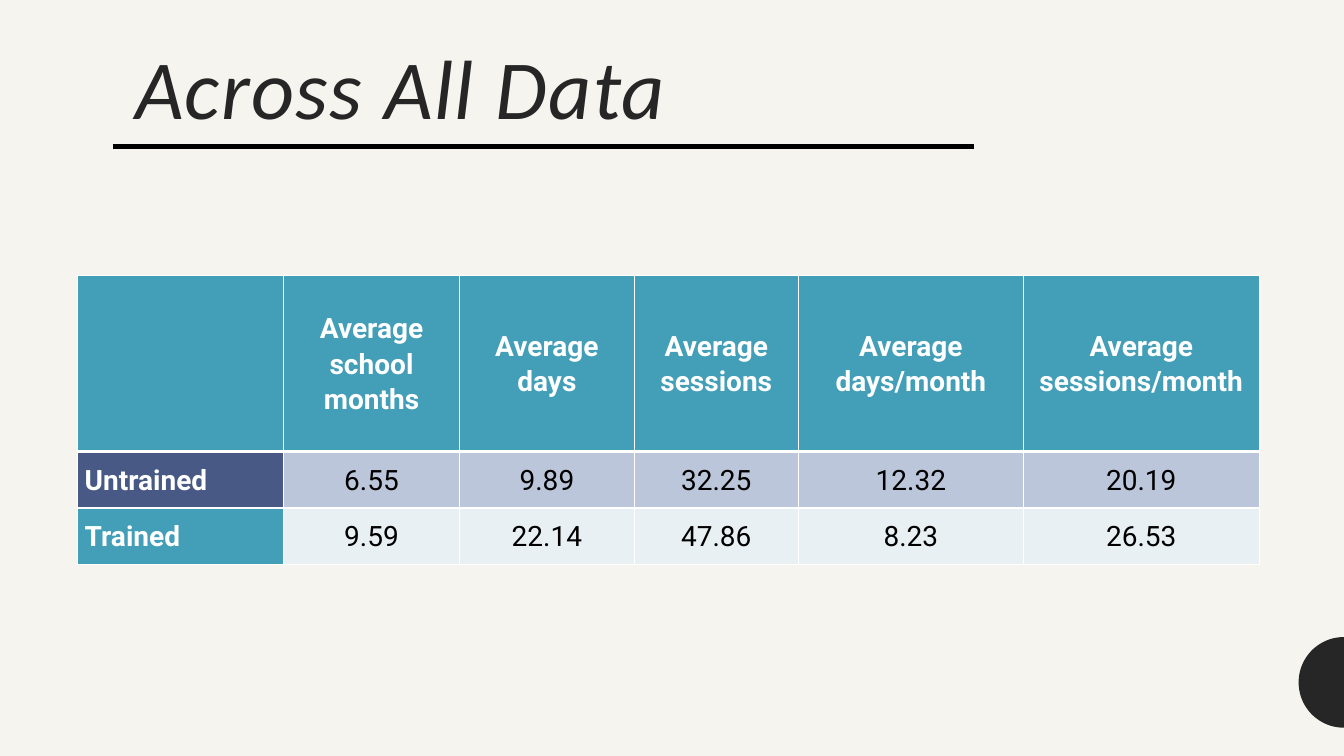
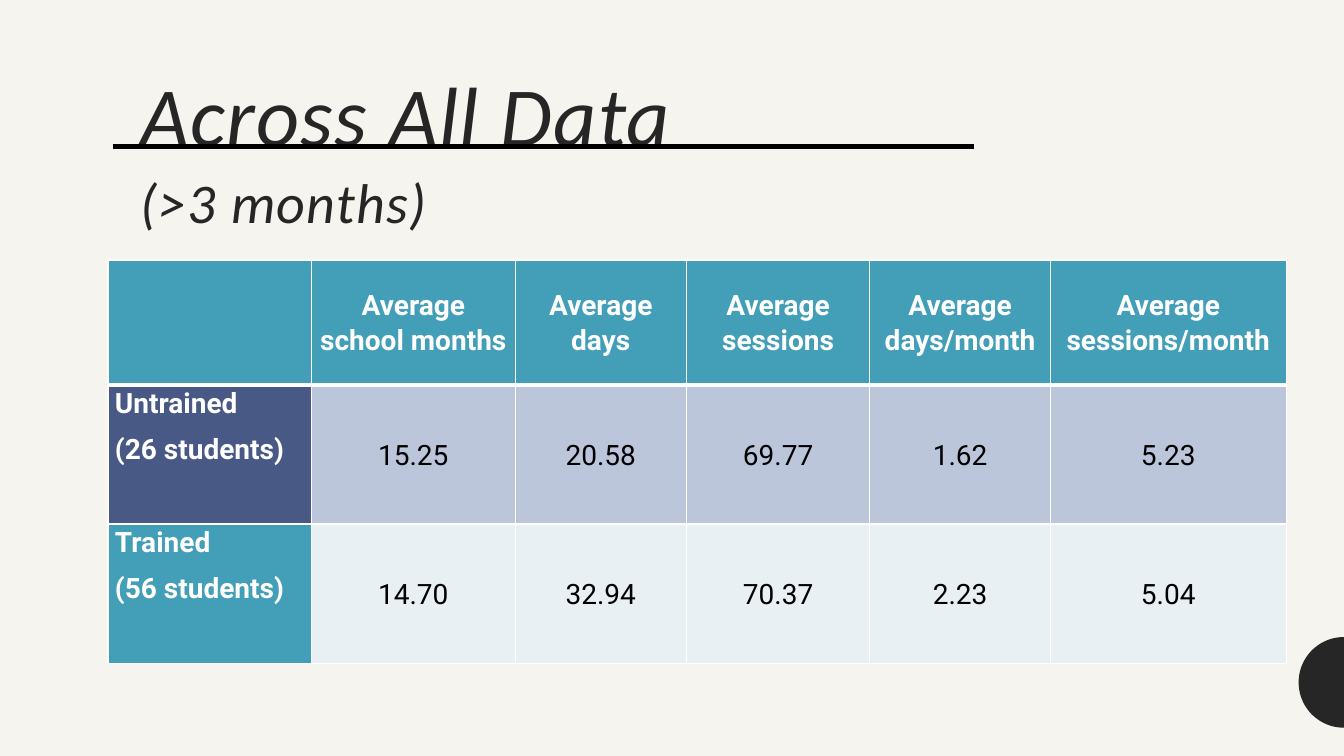
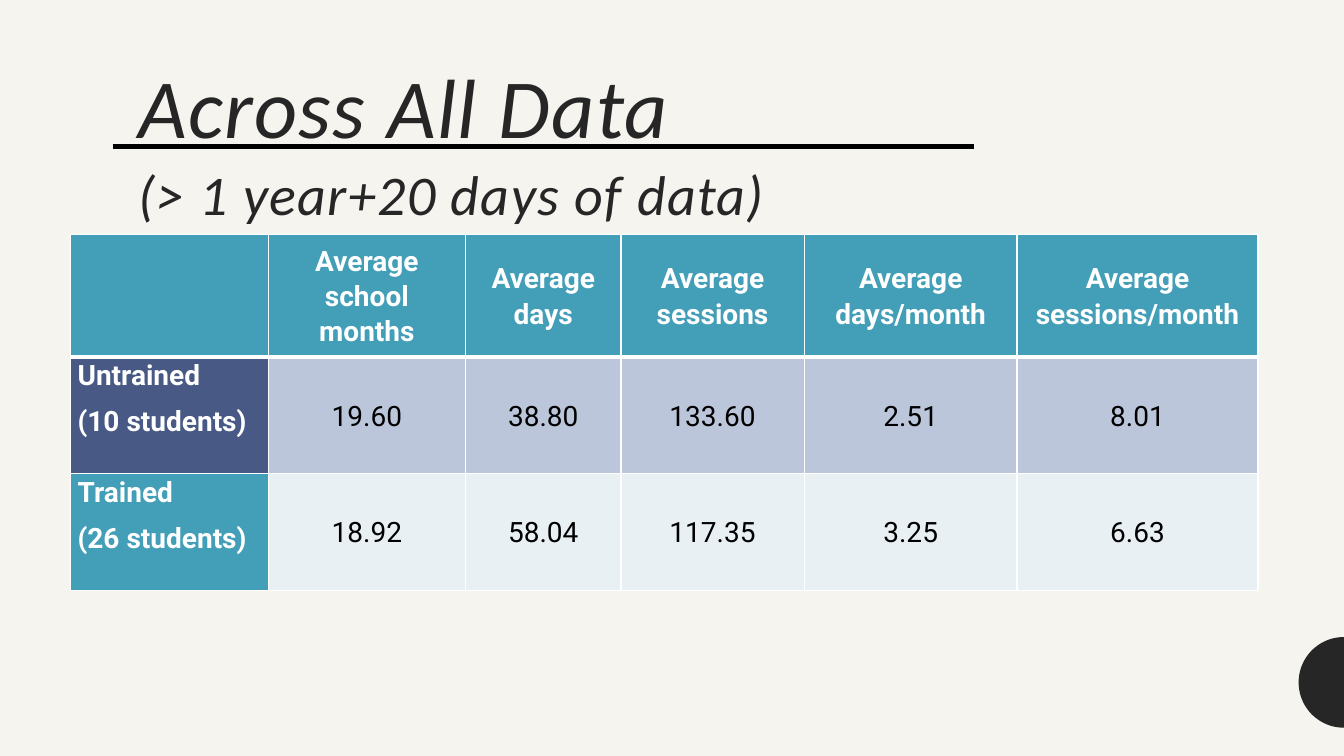
import math
from dataclasses import dataclass

from lxml import etree
from pptx import Presentation
from pptx import util as u
from pptx.dml.color import RGBColor
from pptx.enum import shapes, text
from pptx.oxml.ns import qn

# Shared look
PAPER, INK, BLACK, WHITE = "F6F4EF", "262626", "000000", "FFFFFF"
TEAL, NAVY, LAVENDER, MIST = "439EB7", "475984", "BCC6DB", "E9F0F3"
TITLE_FONT, TABLE_FONT = "Calibri", "Roboto"
WIDTH, HEIGHT = u.Inches(13.33), u.Inches(7.5)
TITLE_WIDTH = 84.4
RULE_LEFT, RULE_RIGHT, RULE_TOP = 8.4, 72.47, 19.33
DISC_MIDDLE, DISC_RADIUS, DISC_STEPS = 90.27, 6, 50

HEADERS = ["", "Average school months", "Average days", "Average sessions",
           "Average days/month", "Average sessions/month"]
ROW_FILLS = [(TEAL, TEAL), (NAVY, LAVENDER), (TEAL, MIST)]


@dataclass
class Title:
    """Place of the title and its optional second line, in percent."""
    left: float
    top: float
    height: float
    subtitle: str = ""


@dataclass
class Grid:
    """Place of a table in percent, with its body rows."""
    left: float
    top: float
    columns: list[float]
    header_height: float
    row_height: float
    rows: list[list[str]]
    label_align: text.PP_ALIGN = text.PP_ALIGN.LEFT
    label_anchor: text.MSO_ANCHOR = text.MSO_ANCHOR.TOP


PAGES = [
    (Title(9.3, 4.53, 14.8),
     Grid(5.78, 36.4, [15.3, 13.13, 12.98, 12.23, 16.73, 17.55], 23.33, 7.47,
          [["Untrained", "6.55", "9.89", "32.25", "12.32", "20.19"],
           ["Trained", "9.59", "22.14", "47.86", "8.23", "26.53"]],
          text.PP_ALIGN.JUSTIFY, text.MSO_ANCHOR.MIDDLE)),
    (Title(9.68, 2.13, 30.27, "(>3 months)"),
     Grid(8.03, 34.4, [15.15, 15.15, 12.75, 13.65, 13.43, 17.55], 16.53, 18.4,
          [["Untrained\n(26 students)", "15.25", "20.58", "69.77", "1.62", "5.23"],
           ["Trained\n(56 students)", "14.70", "32.94", "70.37", "2.23", "5.04"]])),
    (Title(9.53, 12.27, 19.07, "(> 1 year+20 days of data)"),
     Grid(5.25, 31.07, [14.7, 14.7, 11.55, 13.65, 15.83, 17.93], 16.13, 15.47,
          [["Untrained\n(10 students)", "19.60", "38.80", "133.60", "2.51", "8.01"],
           ["Trained\n(26 students)", "18.92", "58.04", "117.35", "3.25", "6.63"]])),
]


def across(percent: float) -> int:
    return round(WIDTH * percent / 100)


def down(percent: float) -> int:
    return round(HEIGHT * percent / 100)


def paint(fill, color: str) -> None:
    fill.solid()
    fill.fore_color.rgb = RGBColor.from_string(color)


def write(paragraph, content: str, *, size: float, font: str, color: str,
          bold: bool = False, italic: bool = False, tracking: float = 0,
          align: text.PP_ALIGN = text.PP_ALIGN.LEFT) -> None:
    """Add a formatted run to a paragraph."""
    paragraph.alignment = align
    paragraph.line_spacing = 1.07
    paragraph.space_before = u.Pt(0)
    paragraph.space_after = u.Pt(8)
    run = paragraph.add_run()
    run.text = content
    run.font.size, run.font.name = u.Pt(size), font
    run.font.bold, run.font.italic = bold, italic
    run.font.color.rgb = RGBColor.from_string(color)
    if tracking:
        run.font._element.set("spc", str(round(tracking * 100)))


def add_title(slide, title: Title) -> None:
    shape = slide.shapes.title
    shape.left, shape.top = across(title.left), down(title.top)
    shape.width, shape.height = across(TITLE_WIDTH), down(title.height)
    frame = shape.text_frame
    frame.auto_size = text.MSO_AUTO_SIZE.NONE
    frame.word_wrap = True
    frame.vertical_anchor = text.MSO_ANCHOR.BOTTOM
    frame.margin_left = frame.margin_right = u.Inches(0.1)
    frame.margin_top = frame.margin_bottom = u.Inches(0.1)
    style = dict(font=TITLE_FONT, color=INK, italic=True, tracking=1)
    paragraph = frame.paragraphs[0]
    write(paragraph, "Across All Data", size=60, **style)
    if title.subtitle:
        paragraph.add_line_break()
        write(paragraph, title.subtitle, size=40, **style)


def add_rule(slide) -> None:
    rule = slide.shapes.add_connector(
        shapes.MSO_CONNECTOR.STRAIGHT, across(RULE_LEFT), down(RULE_TOP),
        across(RULE_RIGHT), down(RULE_TOP))
    rule.line.width = u.Pt(3.5)
    paint(rule.line.fill, BLACK)
    etree.SubElement(rule._element.spPr, qn("a:effectLst"))


def add_half_disc(slide) -> None:
    """Draw the half disc that rests on the right edge."""
    radius, middle = down(DISC_RADIUS), down(DISC_MIDDLE)
    angles = [math.pi * step / DISC_STEPS for step in range(DISC_STEPS + 1)]
    points = [(round(WIDTH - radius * math.sin(angle)),
               round(middle - radius * math.cos(angle))) for angle in angles]
    builder = slide.shapes.build_freeform(*points[0])
    builder.add_line_segments(points[1:], close=True)
    disc = builder.convert_to_shape()
    disc.shadow.inherit = False
    paint(disc.fill, INK)
    disc.line.fill.background()


def add_borders(cell, widths: dict[str, float]) -> None:
    """Give a cell white borders; must run before the cell is filled."""
    properties = cell._tc.get_or_add_tcPr()
    for side, width in widths.items():
        line = etree.SubElement(properties, qn(f"a:ln{side}"), w=str(u.Pt(width)))
        fill = etree.SubElement(line, qn("a:solidFill"))
        etree.SubElement(fill, qn("a:srgbClr"), val=WHITE)


def add_grid(slide, grid: Grid) -> None:
    rows = [HEADERS] + grid.rows
    heights = [grid.header_height] + [grid.row_height] * len(grid.rows)
    table = slide.shapes.add_table(
        len(rows), len(HEADERS), across(grid.left), down(grid.top),
        across(sum(grid.columns)), down(sum(heights))).table
    table.horz_banding = table.first_row = False
    for column, width in zip(table.columns, grid.columns):
        column.width = across(width)
    for row, height in zip(table.rows, heights):
        row.height = down(height)

    for row_index, values in enumerate(rows):
        is_header = row_index == 0
        label_fill, value_fill = ROW_FILLS[row_index]
        borders = {"L": 1, "R": 1, "T": 1, "B": 3} if is_header else {"L": 1, "R": 1, "B": 1}
        for column_index, value in enumerate(values):
            is_label = column_index == 0
            strong = is_header or is_label
            cell = table.cell(row_index, column_index)
            add_borders(cell, borders)
            paint(cell.fill, label_fill if is_label else value_fill)
            cell.margin_left = cell.margin_right = u.Inches(0.07)
            cell.margin_top = cell.margin_bottom = 0
            cell.vertical_anchor = grid.label_anchor if is_label else text.MSO_ANCHOR.MIDDLE
            frame = cell.text_frame
            for line_index, line in enumerate(value.split("\n") if value else []):
                paragraph = frame.add_paragraph() if line_index else frame.paragraphs[0]
                write(paragraph, line, size=20, font=TABLE_FONT, bold=strong,
                      color=WHITE if strong else BLACK,
                      align=grid.label_align if is_label else text.PP_ALIGN.CENTER)


def main() -> None:
    presentation = Presentation()
    presentation.slide_width, presentation.slide_height = WIDTH, HEIGHT
    paint(presentation.slide_master.background.fill, PAPER)
    title_only = presentation.slide_layouts[5]
    for title, grid in PAGES:
        slide = presentation.slides.add_slide(title_only)
        add_half_disc(slide)
        add_title(slide, title)
        add_rule(slide)
        add_grid(slide, grid)
    presentation.save("out.pptx")


if __name__ == "__main__":
    main()
